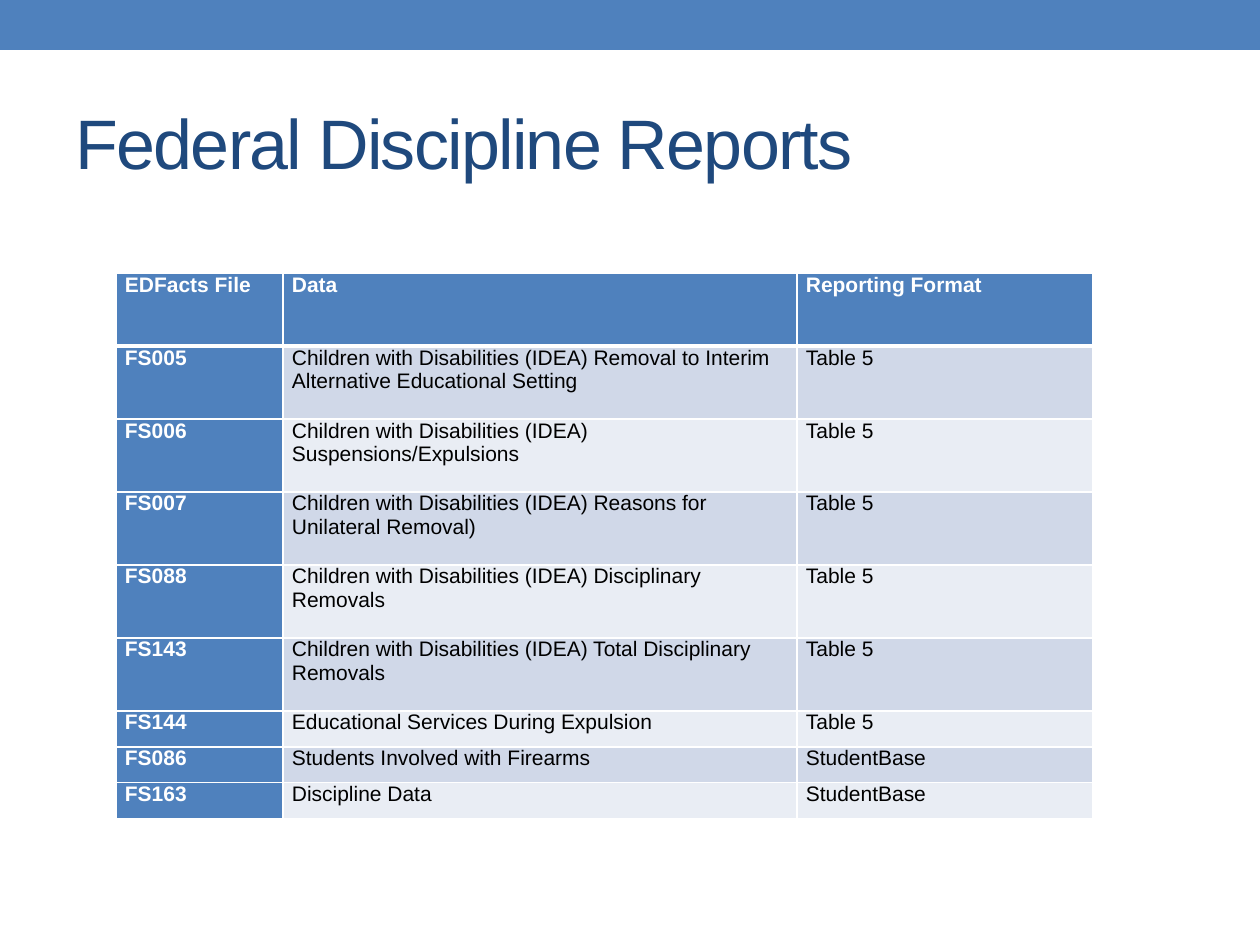
from lxml.etree import SubElement
from pptx import Presentation
from pptx.dml.color import RGBColor
from pptx.enum.shapes import MSO_SHAPE
from pptx.enum.text import MSO_ANCHOR, PP_ALIGN
from pptx.oxml.ns import qn
from pptx.util import Pt

PX = 7257
BLUE, NAVY, WHITE, BLACK = "4F81BD", "1F497D", "FFFFFF", "000000"
BANDS = ["D0D8E8", "E9EDF4"]


def paint(fill, tint):
    fill.solid()
    fill.fore_color.rgb = RGBColor.from_string(tint)


def write(frame, text, size, tint, bold=False):
    run = frame.paragraphs[0].add_run()
    run.text = text
    run.font.name = "Arial"
    run.font.size = Pt(size)
    run.font.bold = bold
    run.font.color.rgb = RGBColor.from_string(tint)
    return run


deck = Presentation()
deck.slide_width, deck.slide_height = 1260 * PX, 945 * PX
slide = deck.slides.add_slide(deck.slide_layouts[5])

bar = slide.shapes.add_shape(MSO_SHAPE.RECTANGLE, 0, 0, 1260 * PX, 50 * PX)
bar.shadow.inherit = False
paint(bar.fill, BLUE)
bar.line.fill.background()

title = slide.shapes.title
title.left, title.top, title.width, title.height = 63 * PX, 73 * PX, 1134 * PX, 136 * PX
title.text_frame.vertical_anchor = MSO_ANCHOR.MIDDLE
title.text_frame.paragraphs[0].alignment = PP_ALIGN.LEFT
head = write(title.text_frame, "Federal Discipline Reports", 40, NAVY)
head.font._element.set("spc", "-100")

idea = "Children with Disabilities (IDEA) "
rows = [
    ("EDFacts File", "Data", "Reporting Format"),
    ("FS005", idea + "Removal to Interim Alternative Educational Setting", "Table 5"),
    ("FS006", idea + "Suspensions/Expulsions", "Table 5"),
    ("FS007", idea + "Reasons for Unilateral Removal)", "Table 5"),
    ("FS088", idea + "Disciplinary Removals", "Table 5"),
    ("FS143", idea + "Total Disciplinary Removals", "Table 5"),
    ("FS144", "Educational Services During Expulsion", "Table 5"),
    ("FS086", "Students Involved with Firearms", "StudentBase"),
    ("FS163", "Discipline Data", "StudentBase"),
]
wide = [167, 514, 296]
tall = [73] * 6 + [36] * 3
grid = slide.shapes.add_table(
    len(rows), len(wide), 116 * PX, 273 * PX, sum(wide) * PX, sum(tall) * PX
).table
grid.first_col = True
for col, width in zip(grid.columns, wide):
    col.width = width * PX

for r, row in enumerate(rows):
    grid.rows[r].height = tall[r] * PX
    for c, text in enumerate(row):
        cell = grid.cell(r, c)
        cell.margin_left = cell.margin_right = 9 * PX
        cell.margin_top = cell.margin_bottom = 0
        props = cell._tc.get_or_add_tcPr()
        for side in ("lnL", "lnR", "lnT", "lnB"):
            thick = (r, side) in [(0, "lnB"), (1, "lnT")]
            edge = SubElement(props, qn("a:" + side), w=str(Pt(3 if thick else 1)))
            solid = SubElement(edge, qn("a:solidFill"))
            SubElement(solid, qn("a:srgbClr"), val=WHITE)
        key = r == 0 or c == 0
        paint(cell.fill, BLUE if key else BANDS[(r - 1) % 2])
        write(cell.text_frame, text, 12, WHITE if key else BLACK, key)

deck.save("out.pptx")
